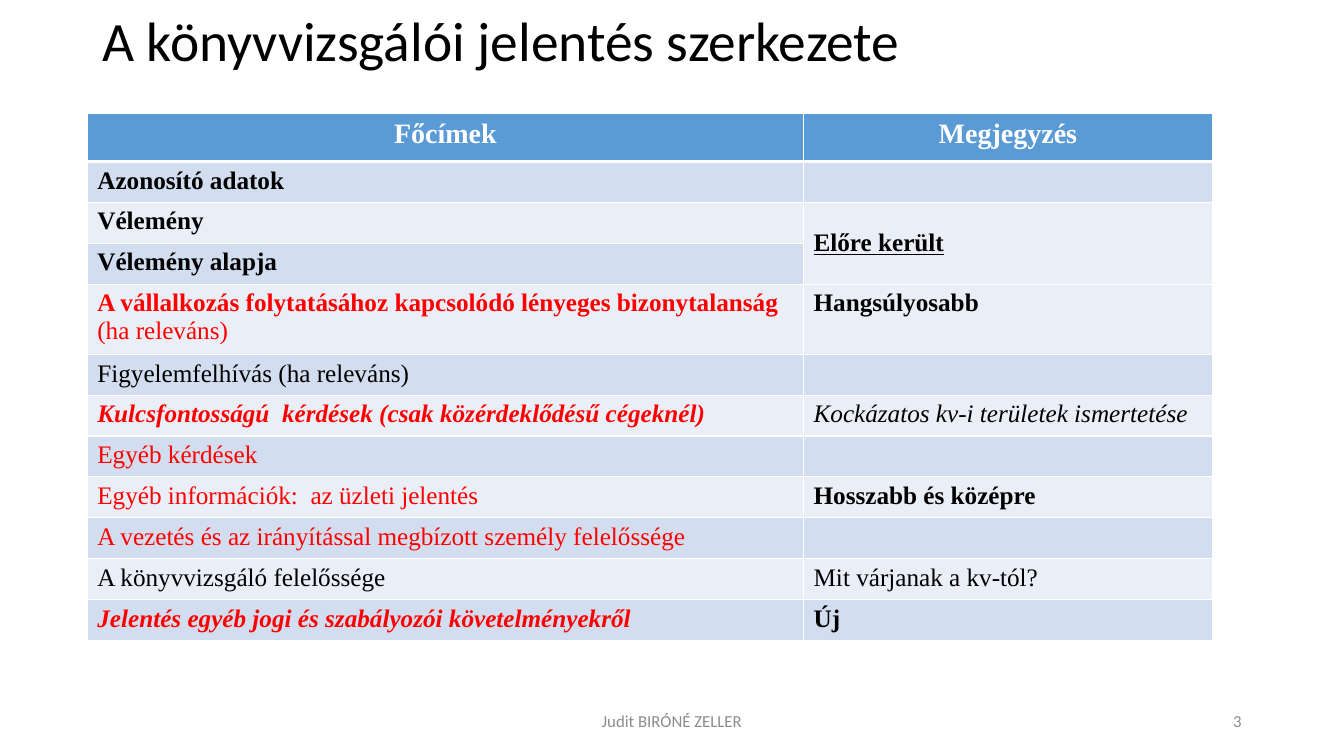
import dataclasses

import lxml.etree
import pptx
import pptx.dml.color
import pptx.enum.text
import pptx.oxml.ns
import pptx.util

Cm = pptx.util.Cm
Align = pptx.enum.text.PP_ALIGN
Anchor = pptx.enum.text.MSO_ANCHOR


@dataclasses.dataclass(frozen=True)
class Theme:
    """Colours, fonts and type sizes of the slide."""
    heading_font: str = "Calibri"
    table_font: str = "Times New Roman"
    title_size: float = 39.6
    header_size: float = 20
    body_size: float = 18
    footer_size: float = 12
    text: str = "000000"
    highlight: str = "FF0000"
    muted: str = "8C8C8C"
    white: str = "FFFFFF"
    header_fill: str = "5B9BD5"
    bands: tuple = ("D2DEEF", "EAEFF7")
    rule: float = 1
    header_rule: float = 3


HEADERS = ("Főcímek", "Megjegyzés")
# Style letters: b bold, i italic, u underlined, r highlighted
ROWS = (
    ([("Azonosító adatok", "b")], []),
    ([("Vélemény", "b")], [("Előre került", "bu")]),
    ([("Vélemény alapja", "b")], []),
    ([("A vállalkozás folytatásához kapcsolódó lényeges bizonytalanság ", "br"),
      ("(ha releváns)", "r")], [("Hangsúlyosabb", "b")]),
    ([("Figyelemfelhívás (ha releváns)", "")], []),
    ([("Kulcsfontosságú  kérdések (csak közérdeklődésű cégeknél)", "bir")],
     [("Kockázatos kv-i területek ismertetése", "i")]),
    ([("Egyéb kérdések", "r")], []),
    ([("Egyéb információk:  az üzleti jelentés", "r")], [("Hosszabb és középre", "b")]),
    ([("A vezetés és az irányítással megbízott személy felelőssége", "r")], []),
    ([("A könyvvizsgáló felelőssége", "")], [("Mit várjanak a kv-tól?", "")]),
    ([("Jelentés egyéb jogi és szabályozói követelményekről", "bir")], [("Új", "b")]),
)
COLUMN_WIDTHS = (18.05, 10.3)
ROW_HEIGHT = 1.03
SPECIAL_HEIGHTS = {0: 1.22, 4: 1.65, 5: 1.0}
MERGED_ROWS = (2, 3)


class SlideBuilder:
    """Adds styled elements to the current slide."""

    def __init__(self, slide, theme):
        self.slide = slide
        self.theme = theme

    def add_run(self, paragraph, text, font, size, color, style=""):
        """Add one formatted run."""
        run = paragraph.add_run()
        run.text = text
        run.font.name = font
        run.font.size = pptx.util.Pt(size)
        run.font.color.rgb = pptx.dml.color.RGBColor.from_string(color)
        run.font.bold = "b" in style
        run.font.italic = "i" in style
        run.font.underline = "u" in style

    def add_text(self, text, box, size, color, align=Align.LEFT, spacing=1.0):
        """Add a single-line text box centred vertically."""
        shape = self.slide.shapes.add_textbox(*(Cm(length) for length in box))
        frame = shape.text_frame
        frame.word_wrap = True
        frame.vertical_anchor = Anchor.MIDDLE
        paragraph = frame.paragraphs[0]
        paragraph.alignment = align
        paragraph.line_spacing = spacing
        self.add_run(paragraph, text, self.theme.heading_font, size, color)

    def set_borders(self, cell, top, bottom):
        """Draw white rules around a cell."""
        properties = cell._tc.get_or_add_tcPr()
        widths = {"L": self.theme.rule, "R": self.theme.rule, "T": top, "B": bottom}
        for index, (side, width) in enumerate(widths.items()):
            line = lxml.etree.Element(pptx.oxml.ns.qn(f"a:ln{side}"), w=str(pptx.util.Pt(width)))
            fill = lxml.etree.SubElement(line, pptx.oxml.ns.qn("a:solidFill"))
            lxml.etree.SubElement(fill, pptx.oxml.ns.qn("a:srgbClr"), val=self.theme.white)
            properties.insert(index, line)

    def fill_cell(self, cell, row, runs):
        """Style one cell by its row and add its runs."""
        theme = self.theme
        header = row == 0
        fill = theme.header_fill if header else theme.bands[(row - 1) % 2]
        cell.fill.solid()
        cell.fill.fore_color.rgb = pptx.dml.color.RGBColor.from_string(fill)
        self.set_borders(cell, theme.header_rule if row == 1 else theme.rule,
                         theme.header_rule if header else theme.rule)
        paragraph = cell.text_frame.paragraphs[0]
        paragraph.alignment = Align.CENTER if header else Align.LEFT
        size = theme.header_size if header else theme.body_size
        for text, style in runs:
            body_color = theme.highlight if "r" in style else theme.text
            color = theme.white if header else body_color
            self.add_run(paragraph, text, theme.table_font, size, color, style)

    def add_table(self, left, top):
        """Add the table of report headings."""
        rows = [[[(header, "b")] for header in HEADERS], *ROWS]
        heights = [SPECIAL_HEIGHTS.get(row, ROW_HEIGHT) for row in range(len(rows))]
        table = self.slide.shapes.add_table(
            len(rows), len(HEADERS), Cm(left), Cm(top),
            Cm(sum(COLUMN_WIDTHS)), Cm(sum(heights))).table
        for column, width in zip(table.columns, COLUMN_WIDTHS):
            column.width = Cm(width)
        for row, (height, contents) in enumerate(zip(heights, rows)):
            table.rows[row].height = Cm(height)
            for column, runs in enumerate(contents):
                self.fill_cell(table.cell(row, column), row, runs)
        first, last = MERGED_ROWS
        table.cell(first, 1).merge(table.cell(last, 1))
        table.cell(first, 1).vertical_anchor = Anchor.MIDDLE


def main():
    """Build and save the presentation."""
    presentation = pptx.Presentation()
    presentation.slide_width = Cm(33.87)
    presentation.slide_height = Cm(19.05)
    theme = Theme()
    builder = SlideBuilder(presentation.slides.add_slide(presentation.slide_layouts[6]), theme)
    builder.add_text("A könyvvizsgálói jelentés szerkezete", (2.33, 0.58, 29.21, 1.04),
                     theme.title_size, theme.text, spacing=0.9)
    builder.add_table(2.2, 2.85)
    builder.add_text("Judit BIRÓNÉ ZELLER", (11.22, 17.66, 11.43, 1.01),
                     theme.footer_size, theme.muted, Align.CENTER)
    builder.add_text("3", (23.92, 17.66, 7.62, 1.01),
                     theme.footer_size, theme.muted, Align.RIGHT)
    presentation.save("out.pptx")


if __name__ == "__main__":
    main()
